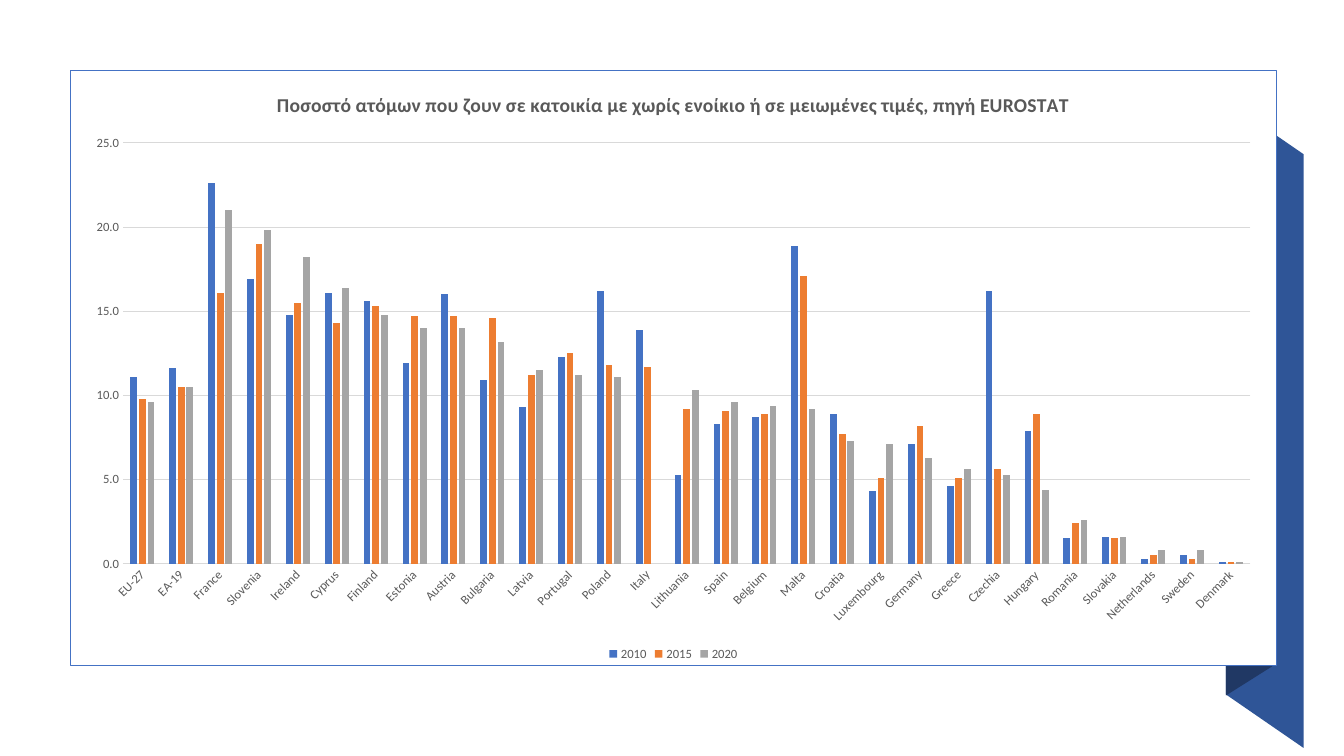
from pptx import Presentation
from pptx.chart.data import CategoryChartData
from pptx.dml.color import RGBColor
from pptx.enum.chart import XL_CHART_TYPE, XL_LEGEND_POSITION, XL_TICK_MARK
from pptx.enum.shapes import MSO_SHAPE
from pptx.util import Pt

PX = 9144
COLORS = {
    "ribbon": "2F5597", "fold": "203864", "panel": "FFFFFF", "border": "4472C4",
    "text": "595959", "grid": "D9D9D9",
    "2010": "4472C4", "2015": "ED7D31", "2020": "A5A5A5",
}
RATES = [
    ("EU-27", 11.1, 9.8, 9.6),
    ("EA-19", 11.6, 10.5, 10.5),
    ("France", 22.6, 16.1, 21),
    ("Slovenia", 16.9, 19, 19.8),
    ("Ireland", 14.8, 15.5, 18.2),
    ("Cyprus", 16.1, 14.3, 16.4),
    ("Finland", 15.6, 15.3, 14.8),
    ("Estonia", 11.9, 14.7, 14),
    ("Austria", 16, 14.7, 14),
    ("Bulgaria", 10.9, 14.6, 13.2),
    ("Latvia", 9.3, 11.2, 11.5),
    ("Portugal", 12.3, 12.5, 11.2),
    ("Poland", 16.2, 11.8, 11.1),
    ("Italy", 13.9, 11.7, None),
    ("Lithuania", 5.3, 9.2, 10.3),
    ("Spain", 8.3, 9.1, 9.6),
    ("Belgium", 8.7, 8.9, 9.4),
    ("Malta", 18.9, 17.1, 9.2),
    ("Croatia", 8.9, 7.7, 7.3),
    ("Luxembourg", 4.3, 5.1, 7.1),
    ("Germany", 7.1, 8.2, 6.3),
    ("Greece", 4.6, 5.1, 5.6),
    ("Czechia", 16.2, 5.6, 5.3),
    ("Hungary", 7.9, 8.9, 4.4),
    ("Romania", 1.5, 2.4, 2.6),
    ("Slovakia", 1.6, 1.5, 1.6),
    ("Netherlands", 0.3, 0.5, 0.8),
    ("Sweden", 0.5, 0.3, 0.8),
    ("Denmark", 0.1, 0.1, 0.1),
]


def rgb(key):
    return RGBColor.from_string(COLORS[key])


def style_font(font, size, bold=False):
    font.name = "Calibri"
    font.size = Pt(size)
    font.bold = bold
    font.color.rgb = rgb("text")


prs = Presentation()
prs.slide_width = 1333 * PX
prs.slide_height = 750 * PX
slide = prs.slides.add_slide(prs.slide_layouts[6])

for part, corners in [
    ("ribbon", [(1293, 742), (1216, 689), (1216, 100), (1293, 153)]),
    ("fold", [(1262, 661), (1216, 690), (1216, 100), (1262, 70)]),
]:
    outline = slide.shapes.build_freeform(*corners[0], scale=PX)
    outline.add_line_segments(corners[1:], close=True)
    band = outline.convert_to_shape()
    band.shadow.inherit = False
    band.fill.solid()
    band.fill.fore_color.rgb = rgb(part)
    band.line.fill.background()

panel = slide.shapes.add_shape(MSO_SHAPE.RECTANGLE, 70 * PX, 70 * PX, 1196 * PX, 590 * PX)
panel.shadow.inherit = False
panel.fill.solid()
panel.fill.fore_color.rgb = rgb("panel")
panel.line.color.rgb = rgb("border")
panel.line.width = Pt(1)

countries, *yearly_rates = zip(*RATES)
rates = CategoryChartData(number_format="#,##0.0")
rates.categories = countries
for year, values in zip(("2010", "2015", "2020"), yearly_rates):
    rates.add_series(year, values)
chart = slide.shapes.add_chart(
    XL_CHART_TYPE.COLUMN_CLUSTERED, 72 * PX, 70 * PX, 1192 * PX, 590 * PX, rates
).chart
style_font(chart.font, 10)

chart.has_title = True
heading = chart.chart_title.text_frame.paragraphs[0]
heading.text = "Ποσοστό ατόμων που ζουν σε κατοικία με χωρίς ενοίκιο ή σε μειωμένες τιμές, πηγή EUROSTAT"
style_font(heading.font, 14, bold=True)
chart.chart_title.include_in_layout = False

chart.has_legend = True
chart.legend.position = XL_LEGEND_POSITION.BOTTOM
chart.legend.include_in_layout = False
style_font(chart.legend.font, 9)

columns = chart.plots[0]
columns.gap_width = 219
columns.overlap = -27
columns.vary_by_categories = False
for series in columns.series:
    series.invert_if_negative = False
    series.format.fill.solid()
    series.format.fill.fore_color.rgb = rgb(series.name)

country_axis, rate_axis = chart.category_axis, chart.value_axis
for axis in (country_axis, rate_axis):
    axis.major_tick_mark = XL_TICK_MARK.NONE
    axis.minor_tick_mark = XL_TICK_MARK.NONE
    style_font(axis.tick_labels.font, 9)

rate_axis.minimum_scale = 0
rate_axis.maximum_scale = 25
rate_axis.major_unit = 5
rate_axis.tick_labels.number_format = "#,##0.0"
rate_axis.tick_labels.number_format_is_linked = False
rate_axis.format.line.fill.background()
for line in (country_axis.format.line, rate_axis.major_gridlines.format.line):
    line.color.rgb = rgb("grid")
    line.width = Pt(0.75)
country_axis._element.txPr.bodyPr.set("rot", "-2700000")

prs.save("out.pptx")
